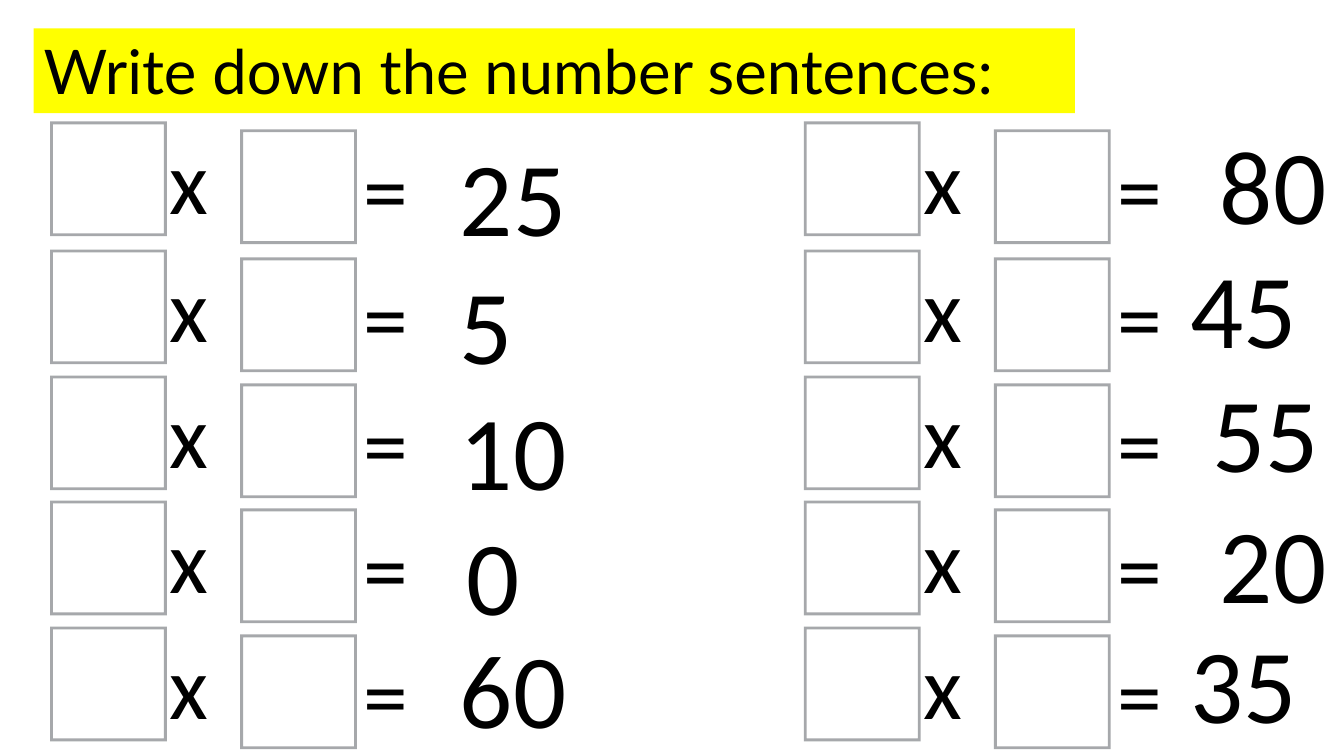
from lxml.etree import SubElement
from pptx import Presentation
from pptx.dml.color import RGBColor
from pptx.enum.shapes import MSO_SHAPE
from pptx.enum.text import MSO_ANCHOR, MSO_AUTO_SIZE, PP_ALIGN
from pptx.oxml.ns import qn
from pptx.util import Pt

ROW_TOPS = [87.8, 179.3, 269.3, 358.6, 448.6]
LEFT_ANSWERS = [("25", 287.2, 1.7), ("5", 287.2, 2), ("10", 287.2, 2),
                ("0", 292.2, 1.6), ("60", 287.2, -7.2)]
RIGHT_ANSWERS = [("80", 291.7, -6.5), ("45", 270.8, -10), ("55", 286.6, -10.8),
                 ("20", 291.7, -6.5), ("35", 270.8, -10.8)]


def color(value):
    return RGBColor.from_string(value)


def write(tf, text, size, font="Calibri", inset=4.5, anchor=MSO_ANCHOR.MIDDLE):
    tf.word_wrap = True
    tf.auto_size = MSO_AUTO_SIZE.SHAPE_TO_FIT_TEXT
    tf.vertical_anchor = anchor
    tf.margin_top = tf.margin_bottom = Pt(inset)
    tf.margin_left = tf.margin_right = Pt(inset)
    p = tf.paragraphs[0]
    p.alignment = PP_ALIGN.LEFT
    p.line_spacing = 1.0
    p.space_before = Pt(0)
    r = p.add_run()
    r.text = text
    r.font.size = Pt(size)
    r.font.name = font
    r.font.color.rgb = color("000000")


def label(shapes, text, x, y, w, h, size):
    tb = shapes.add_textbox(Pt(x), Pt(y), Pt(w), Pt(h))
    write(tb.text_frame, text, size)


def answer_box(shapes, x, y):
    sp = shapes.add_shape(MSO_SHAPE.RECTANGLE, Pt(x), Pt(y), Pt(81.4), Pt(79.9))
    sp.shadow.inherit = False
    sp.fill.solid()
    sp.fill.fore_color.rgb = color("FFFFFF")
    sp.line.color.rgb = color("85888D")
    sp.line.width = Pt(2)
    for clr in sp._element.spPr.iter(qn("a:srgbClr")):
        SubElement(clr, qn("a:alpha"), val="72000")
    SubElement(sp._element.spPr.find(qn("a:ln")), qn("a:miter"), lim="400000")


def title(s, text, x, y, w, h):
    sp = s.shapes.title
    sp.left, sp.top, sp.width, sp.height = Pt(x), Pt(y), Pt(w), Pt(h)
    sp.fill.solid()
    sp.fill.fore_color.rgb = color("FFFF00")
    tf = sp.text_frame
    write(tf, text, 44, font="Lato", inset=3.6, anchor=MSO_ANCHOR.TOP)
    tf.margin_left = tf.margin_right = Pt(7.2)


def sentence(s, x, y):
    shapes = s.shapes.add_group_shape().shapes
    label(shapes, "x", x + 80, y - 2.6, 59, 85, 64)
    answer_box(shapes, x + 135.8, y + 5.6)
    answer_box(shapes, x, y)
    label(shapes, "=", x + 218.3, y + 3.4, 69, 85, 64)


def column(s, x, answers):
    for y, (text, dx, dy) in zip(ROW_TOPS, answers):
        sentence(s, x, y)
        label(s.shapes, text, x + dx, y + dy, 11 + 38 * len(text), 98.6, 75)


def main():
    prs = Presentation()
    prs.slide_width, prs.slide_height = Pt(960), Pt(540)
    s = prs.slides.add_slide(prs.slide_layouts[5])
    title(s, "Write down the number sentences:", 24, 20.2, 743.8, 60.5)
    column(s, 575.2, RIGHT_ANSWERS)
    column(s, 36.8, LEFT_ANSWERS)
    prs.save("out.pptx")


if __name__ == "__main__":
    main()
